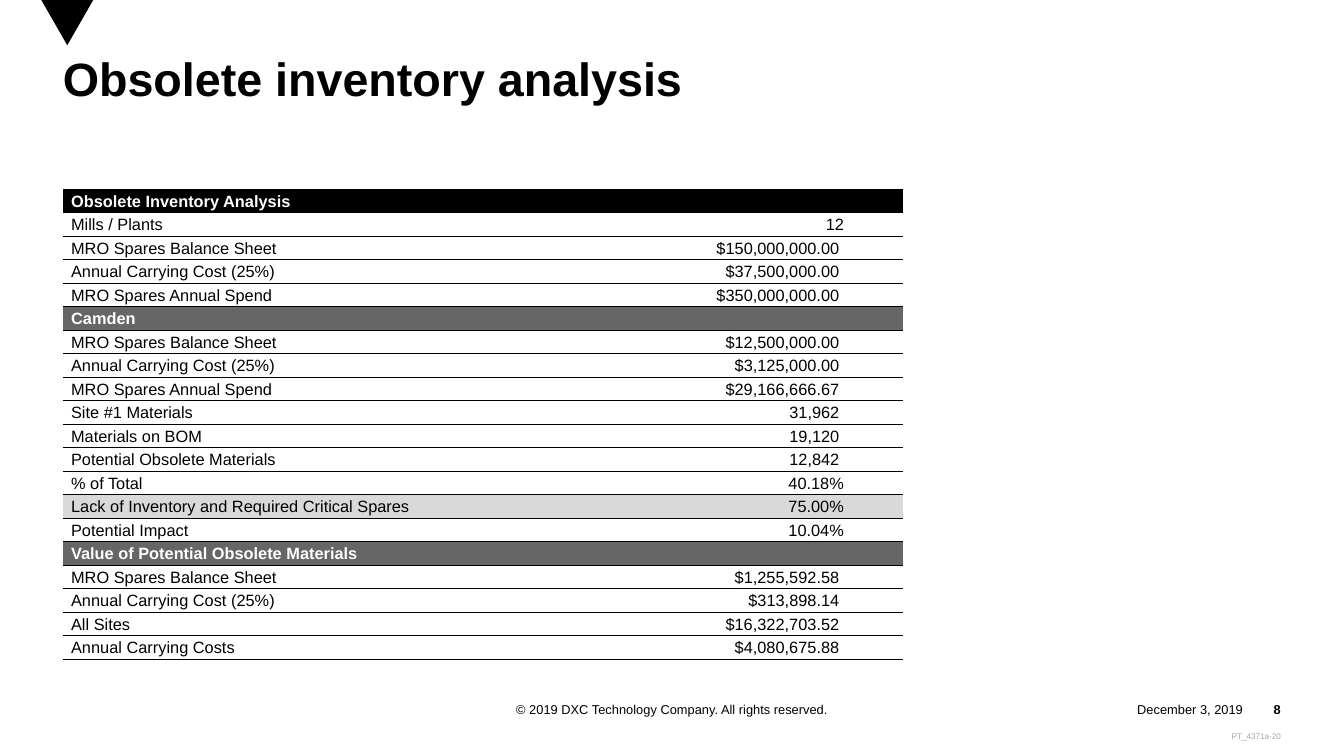
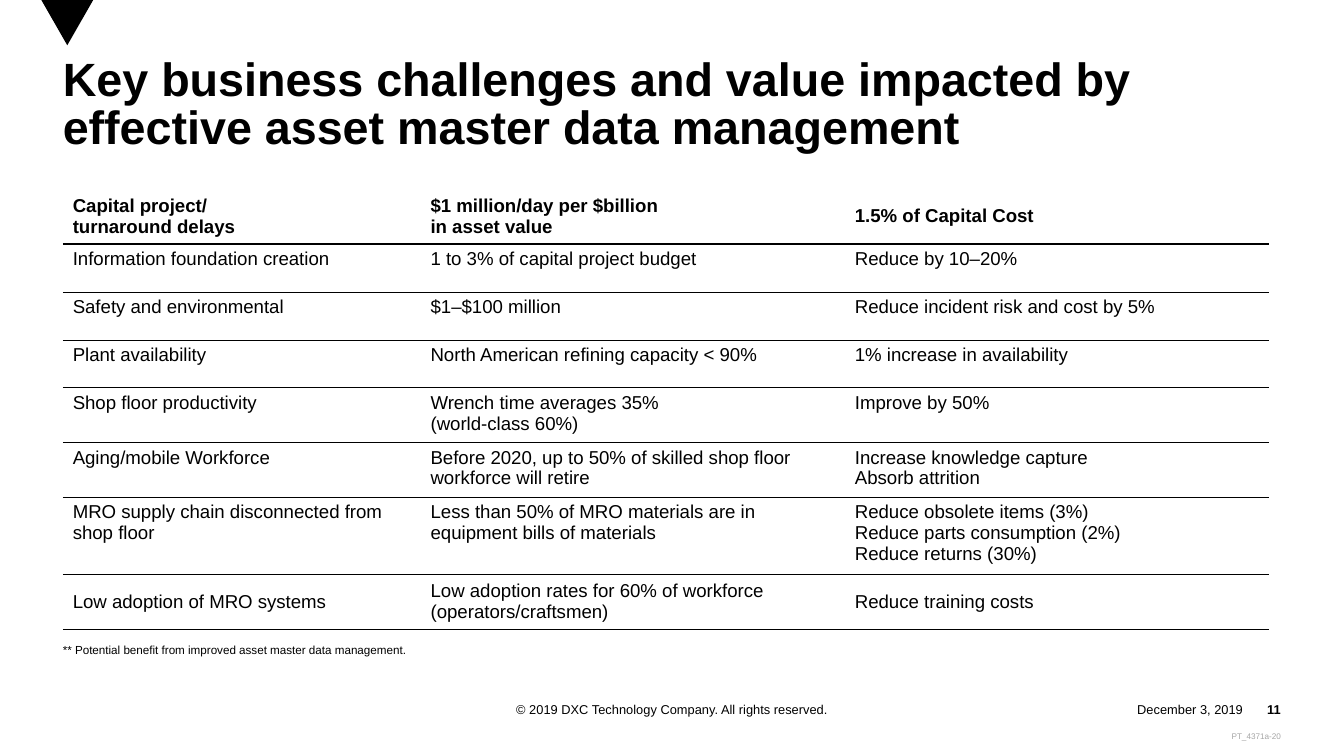
from lxml import etree
from pptx import Presentation
from pptx.dml.color import RGBColor
from pptx.enum.shapes import MSO_SHAPE
from pptx.enum.text import MSO_ANCHOR, PP_ALIGN
from pptx.oxml.ns import qn
from pptx.util import Cm, Pt

LEFT, CENTER, RIGHT = PP_ALIGN.LEFT, PP_ALIGN.CENTER, PP_ALIGN.RIGHT
TOP, MIDDLE, BOTTOM = MSO_ANCHOR.TOP, MSO_ANCHOR.MIDDLE, MSO_ANCHOR.BOTTOM
DOWN_TRIANGLE = MSO_SHAPE.FLOWCHART_MERGE

FONT = "Arial"
COLORS = {
    "black": "000000",
    "white": "FFFFFF",
    "section": "666666",
    "highlight": "D9D9D9",
    "code": "A6A6A6",
}
PLAIN_TABLE_STYLE = "{2D5ABB26-0587-4C30-8999-92F81FD0307C}"
MARGIN_LEFT = 1.9
TABLE_TOP = 5.72

# Obsolete inventory rows: label, value, fill; a row without a value is a heading
INVENTORY_ROWS = [
    ("Obsolete Inventory Analysis", None, "black"),
    ("Mills / Plants", "12", None),
    ("MRO Spares Balance Sheet", "$150,000,000.00 ", None),
    ("Annual Carrying Cost (25%)", "$37,500,000.00 ", None),
    ("MRO Spares Annual Spend", "$350,000,000.00 ", None),
    ("Camden", None, "section"),
    ("MRO Spares Balance Sheet", "$12,500,000.00 ", None),
    ("Annual Carrying Cost (25%)", "$3,125,000.00 ", None),
    ("MRO Spares Annual Spend", "$29,166,666.67 ", None),
    ("Site #1 Materials", "31,962 ", None),
    ("Materials on BOM", "19,120 ", None),
    ("Potential Obsolete Materials", "12,842 ", None),
    ("% of Total", "40.18%", None),
    ("Lack of Inventory and Required Critical Spares", "75.00%", "highlight"),
    ("Potential Impact", "10.04%", None),
    ("Value of Potential Obsolete Materials", None, "section"),
    ("MRO Spares Balance Sheet", "$1,255,592.58 ", None),
    ("Annual Carrying Cost (25%)", "$313,898.14 ", None),
    ("All Sites", "$16,322,703.52 ", None),
    ("Annual Carrying Costs", "$4,080,675.88 ", None),
]

# Business challenges: \v breaks a line, \n starts a paragraph
CHALLENGE_ROWS = [
    ("Capital project/\vturnaround delays",
     "$1 million/day per $billion\vin asset value",
     "1.5% of Capital Cost"),
    ("Information foundation creation",
     "1 to 3% of capital project budget",
     "Reduce by 10–20%"),
    ("Safety and environmental",
     "$1–$100 million",
     "Reduce incident risk and cost by 5%"),
    ("Plant availability",
     "North American refining capacity < 90%",
     "1% increase in availability"),
    ("Shop floor productivity",
     "Wrench time averages 35%\n(world-class 60%)",
     "Improve by 50%"),
    ("Aging/mobile Workforce",
     "Before 2020, up to 50% of skilled shop floor workforce will retire",
     "Increase knowledge capture\nAbsorb attrition"),
    ("MRO supply chain disconnected from shop floor",
     "Less than 50% of MRO materials are in equipment bills of materials",
     "Reduce obsolete items (3%)\nReduce parts consumption (2%)\nReduce returns (30%)"),
    ("Low adoption of MRO systems",
     "Low adoption rates for 60% of workforce (operators/craftsmen)",
     "Reduce training costs"),
]


def rgb(name):
    return RGBColor.from_string(COLORS[name])


def write_text(text_frame, text, size, color="black", bold=False, align=LEFT, spacing=None):
    text_frame.text = text
    for paragraph in text_frame.paragraphs:
        paragraph.alignment = align
        if spacing:
            paragraph.line_spacing = spacing
        font = paragraph.font
        font.name, font.size, font.bold = FONT, Pt(size), bold
        font.color.rgb = rgb(color)


def add_text(slide, box, text, size, anchor=TOP, **style):
    text_frame = slide.shapes.add_textbox(*map(Cm, box)).text_frame
    text_frame.word_wrap = True
    text_frame.vertical_anchor = anchor
    text_frame.margin_left = text_frame.margin_right = 0
    text_frame.margin_top = text_frame.margin_bottom = 0
    write_text(text_frame, text, size, **style)


def add_base_slide(presentation, title, number):
    slide = presentation.slides.add_slide(presentation.slide_layouts[6])

    # Corner marker
    marker = slide.shapes.add_shape(DOWN_TRIANGLE, Cm(1.25), 0, Cm(1.57), Cm(1.37))
    marker.shadow.inherit = False
    marker.fill.solid()
    marker.fill.fore_color.rgb = rgb("black")
    marker.line.fill.background()

    # Footer
    footer_top, footer_height = 21.06, 0.76
    for left, width, text, align, bold in (
        (13.34, 13.97, "© 2019 DXC Technology Company. All rights reserved.", CENTER, False),
        (33.05, 4.54, "December 3, 2019", RIGHT, False),
        (37.59, 1.14, str(number), RIGHT, True),
    ):
        add_text(slide, (left, footer_top, width, footer_height), text, 11,
                 anchor=MIDDLE, align=align, bold=bold)
    add_text(slide, (33.05, 22.1, 5.68, 0.3), "PT_4371a-20", 7, color="code", align=RIGHT)

    # Title
    add_text(slide, (MARGIN_LEFT, 1.78, 36.83, 3.94), title, 40, bold=True, spacing=0.85)
    return slide


def add_plain_table(slide, column_widths, row_heights):
    frame = slide.shapes.add_table(
        len(row_heights), len(column_widths), Cm(MARGIN_LEFT), Cm(TABLE_TOP),
        Cm(sum(column_widths)), Cm(sum(row_heights)))
    table = frame.table
    table.first_row = table.horz_banding = False
    frame._element.find(".//" + qn("a:tableStyleId")).text = PLAIN_TABLE_STYLE
    for column, width in zip(table.columns, column_widths):
        column.width = Cm(width)
    for row, height in zip(table.rows, row_heights):
        row.height = Cm(height)
    return table


def set_bottom_border(cell, width):
    line = etree.Element(qn("a:lnB"), w=str(Pt(width)))
    fill = etree.SubElement(line, qn("a:solidFill"))
    etree.SubElement(fill, qn("a:srgbClr"), val=COLORS["black"])
    cell._tc.get_or_add_tcPr().insert(0, line)


def fill_cell(cell, text, size, margins, anchor, fill=None, border=0.5, **style):
    cell.margin_left, cell.margin_top, cell.margin_right, cell.margin_bottom = map(Cm, margins)
    cell.vertical_anchor = anchor
    write_text(cell.text_frame, text, size, **style)
    if fill:
        cell.fill.solid()
        cell.fill.fore_color.rgb = rgb(fill)
    else:
        cell.fill.background()
    set_bottom_border(cell, border)


def add_inventory_table(slide):
    table = add_plain_table(slide, (17.86, 7.54), [0.71] * len(INVENTORY_ROWS))
    for row, (label, value, fill) in enumerate(INVENTORY_ROWS):
        heading = value is None
        label_cell, value_cell = table.cell(row, 0), table.cell(row, 1)
        fill_cell(label_cell, label, 14, (0.25, 0.05, 0.05, 0.05), BOTTOM, fill,
                  color="white" if heading else "black", bold=heading)
        fill_cell(value_cell, value or "", 14, (0.05, 0.05, 1.78, 0.05), BOTTOM, fill,
                  align=RIGHT)
        if heading:
            label_cell.merge(value_cell)


def add_challenge_table(slide):
    row_heights = [1.57] + [1.45] * 5 + [2.24, 1.57]
    table = add_plain_table(slide, (10.82, 12.83, 12.83), row_heights)
    last = len(CHALLENGE_ROWS) - 1
    for row, texts in enumerate(CHALLENGE_ROWS):
        header = row == 0
        for column, text in enumerate(texts):
            fill_cell(table.cell(row, column), text, 16, (0.3, 0.15, 0.3, 0.15),
                      MIDDLE if row in (0, last) else TOP,
                      border=1.5 if header else 0.5, bold=header)


def main():
    presentation = Presentation()
    presentation.slide_width, presentation.slide_height = Cm(40.64), Cm(22.86)

    # Inventory figures
    slide = add_base_slide(presentation, "Obsolete inventory analysis", 8)
    add_inventory_table(slide)

    # Challenges and value
    slide = add_base_slide(
        presentation,
        "Key business challenges and value impacted by effective asset master data management",
        11)
    add_challenge_table(slide)
    add_text(slide, (MARGIN_LEFT, 19.48, 13.34, 0.46),
             "** Potential benefit from improved asset master data management.", 10, spacing=0.9)

    presentation.save("out.pptx")


if __name__ == "__main__":
    main()
